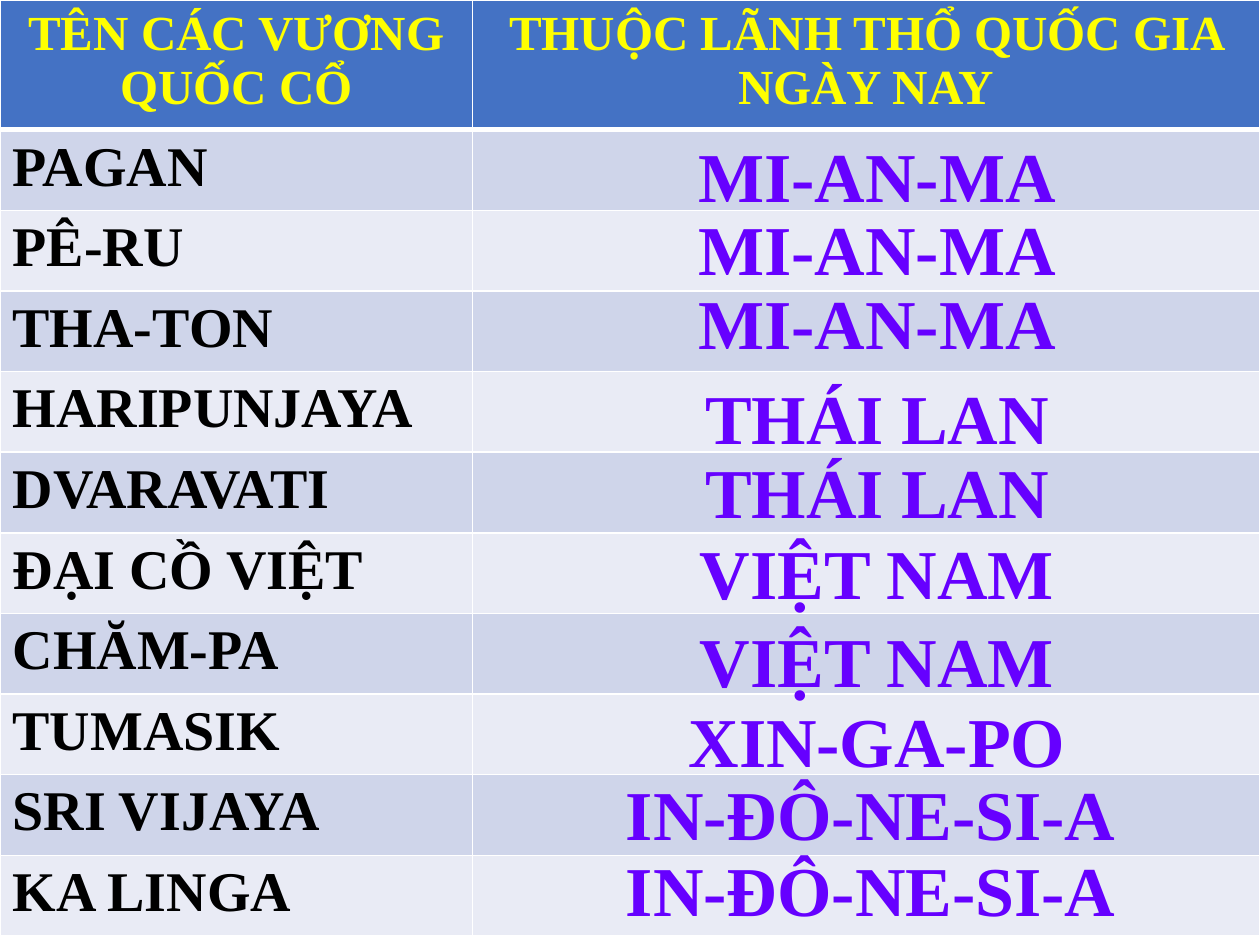
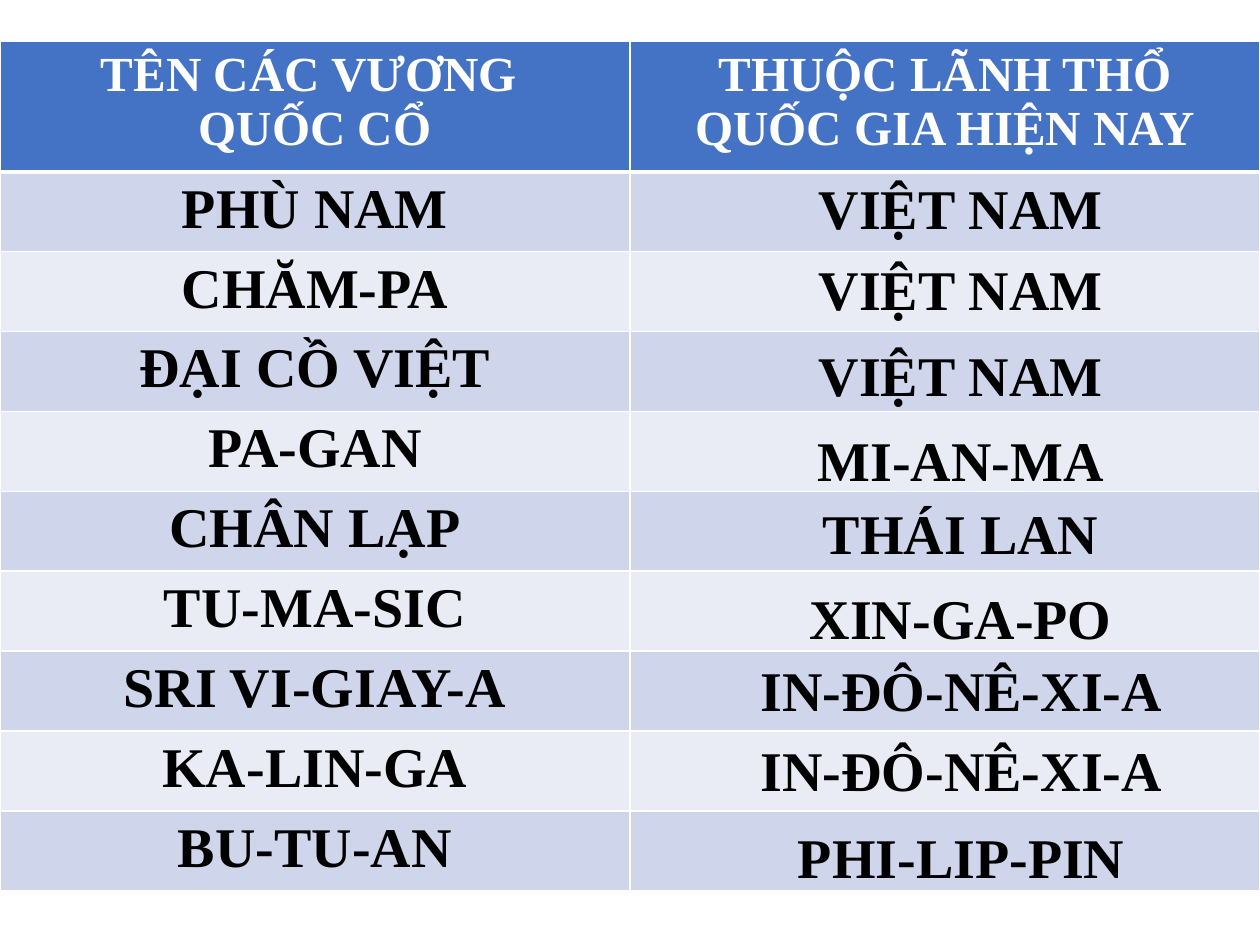
from lxml import etree
from pptx import Presentation
from pptx.dml.color import RGBColor
from pptx.enum.text import MSO_AUTO_SIZE as AutoSize, PP_ALIGN as Align
from pptx.oxml.ns import qn
from pptx.util import Inches, Pt

WHITE = RGBColor(0xFF, 0xFF, 0xFF)
BLACK = RGBColor(0x00, 0x00, 0x00)
YELLOW = RGBColor(0xFF, 0xFF, 0x00)
VIOLET = RGBColor(0x66, 0x00, 0xFF)
HEADER_BLUE = RGBColor(0x44, 0x72, 0xC4)
BANDS = [RGBColor(0xE9, 0xEB, 0xF5), RGBColor(0xCF, 0xD5, 0xEA)]
FONT = "Times New Roman"
HEADER_HEIGHT = 1.03

PAGES = [
    {
        "top": 0, "columns": [3.75, 6.25], "row_height": 0.64,
        "header_color": YELLOW, "name_align": Align.LEFT,
        "answer_color": VIOLET, "answer_size": 40, "answer_height": 0.77,
        "headers": ["TÊN CÁC VƯƠNG QUỐC CỔ", "THUỘC LÃNH THỔ QUỐC GIA NGÀY NAY"],
        "kingdoms": ["PAGAN", "PÊ-RU", "THA-TON", "HARIPUNJAYA", "DVARAVATI",
                     "ĐẠI CỒ VIỆT", "CHĂM-PA", "TUMASIK", "SRI VIJAYA", "KA LINGA"],
        "answers": [
            (4.17, 5.58, [(1, "MI-AN-MA"), (1.58, "MI-AN-MA"), (2.17, "MI-AN-MA"),
                          (2.92, "THÁI LAN"), (3.51, "THÁI LAN"), (4.15, "VIỆT NAM"),
                          (4.85, "VIỆT NAM"), (5.49, "XIN-GA-PO")]),
            (4.12, 5.58, [(6.07, "IN-ĐÔ-NE-SI-A"), (6.67, "IN-ĐÔ-NE-SI-A")]),
        ],
    },
    {
        "top": 0.33, "columns": [5, 5], "row_height": 0.63,
        "header_color": WHITE, "name_align": Align.CENTER,
        "answer_color": BLACK, "answer_size": 32, "answer_height": 0.64,
        "headers": ["TÊN CÁC VƯƠNG \nQUỐC CỔ", "THUỘC LÃNH THỔ QUỐC GIA HIỆN NAY"],
        "kingdoms": ["PHÙ NAM", "CHĂM-PA", "ĐẠI CỒ VIỆT", "PA-GAN", "CHÂN LẠP",
                     "TU-MA-SIC", "SRI VI-GIAY-A", "KA-LIN-GA", "BU-TU-AN"],
        "answers": [
            (6, 3.25, [(1.33, "VIỆT NAM"), (1.97, "VIỆT NAM"), (2.65, "VIỆT NAM"),
                       (3.33, "MI-AN-MA"), (3.91, "THÁI LAN"), (4.58, "XIN-GA-PO")]),
            (5.92, 3.42, [(5.15, "IN-ĐÔ-NÊ-XI-A"), (5.79, "IN-ĐÔ-NÊ-XI-A"),
                          (6.48, "PHI-LIP-PIN")]),
        ],
    },
]


def write_text(frame, text, size, color, align):
    frame.text = text
    for para in frame.paragraphs:
        para.alignment = align
        para.font.name = FONT
        para.font.size = Pt(size)
        para.font.bold = True
        para.font.color.rgb = color


def set_borders(cell, top_width, bottom_width):
    properties = cell._tc.get_or_add_tcPr()
    widths = {"L": 1, "R": 1, "T": top_width, "B": bottom_width}
    for position, (side, width) in enumerate(widths.items()):
        line = etree.Element(qn(f"a:ln{side}"), w=str(Pt(width)))
        fill = etree.SubElement(line, qn("a:solidFill"))
        etree.SubElement(fill, qn("a:srgbClr"), val=str(WHITE))
        properties.insert(position, line)


deck = Presentation()
deck.slide_width = Inches(10)
deck.slide_height = Inches(7.5)
blank_layout = deck.slide_layouts[6]

for content in PAGES:
    page = deck.slides.add_slide(blank_layout)
    kingdoms = content["kingdoms"]
    table_height = HEADER_HEIGHT + len(kingdoms) * content["row_height"]
    table = page.shapes.add_table(
        len(kingdoms) + 1, 2, 0, Inches(content["top"]),
        deck.slide_width, Inches(table_height)).table
    for column, width in zip(table.columns, content["columns"]):
        column.width = Inches(width)

    for index, row in enumerate(table.rows):
        is_header = index == 0
        row.height = Inches(HEADER_HEIGHT if is_header else content["row_height"])
        for cell in row.cells:
            cell.fill.solid()
            cell.fill.fore_color.rgb = HEADER_BLUE if is_header else BANDS[index % 2]
            set_borders(cell, 3 if index == 1 else 1, 3 if is_header else 1)

    for column, header in enumerate(content["headers"]):
        write_text(table.cell(0, column).text_frame, header, 28,
                   content["header_color"], Align.CENTER)
    for index, kingdom in enumerate(kingdoms, start=1):
        write_text(table.cell(index, 0).text_frame, kingdom, 32,
                   BLACK, content["name_align"])

    for left, width, answers in content["answers"]:
        for top, country in answers:
            box = page.shapes.add_textbox(
                Inches(left), Inches(top), Inches(width), Inches(content["answer_height"]))
            box.text_frame.word_wrap = True
            box.text_frame.auto_size = AutoSize.SHAPE_TO_FIT_TEXT
            write_text(box.text_frame, country, content["answer_size"],
                       content["answer_color"], Align.CENTER)

deck.save("out.pptx")
